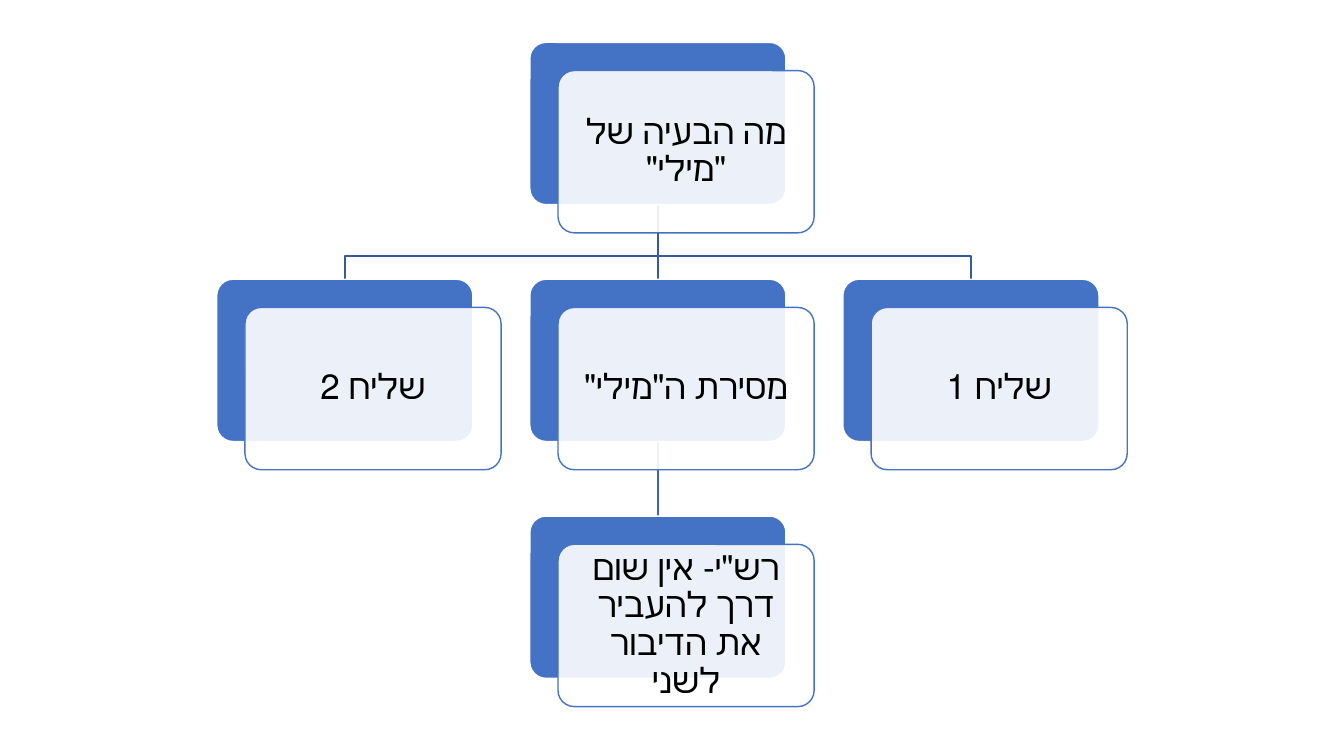
from dataclasses import dataclass

from lxml.etree import SubElement
from pptx import Presentation
from pptx.dml.color import RGBColor
from pptx.enum.shapes import MSO_CONNECTOR, MSO_SHAPE
from pptx.enum.text import MSO_ANCHOR, PP_ALIGN
from pptx.oxml.ns import qn
from pptx.util import Inches, Pt

BLUE, WHITE, BLACK = "4472C4", "FFFFFF", "000000"
LEFT, TOP = 2.15, 0.42
COLUMN, ROW = 3.105, 2.35
CARD_WIDTH, CARD_HEIGHT = 2.54, 1.61
OFFSET = 0.28
BEND = 0.51
INSET = Inches(0.15)
FRAME_FORMAT = dict(
    word_wrap=True, vertical_anchor=MSO_ANCHOR.MIDDLE,
    margin_left=INSET, margin_right=INSET, margin_top=INSET, margin_bottom=INSET,
)


@dataclass(frozen=True)
class Topic:
    text: str
    column: int
    row: int

    @property
    def left(self) -> float:
        return LEFT + self.column * COLUMN

    @property
    def top(self) -> float:
        return TOP + self.row * ROW

    @property
    def center(self) -> float:
        return self.left + CARD_WIDTH / 2

    @property
    def bottom(self) -> float:
        return self.top + CARD_HEIGHT


@dataclass(frozen=True)
class Branch:
    parent: Topic
    child: Topic
    color: str


def rgb(value: str) -> RGBColor:
    return RGBColor.from_string(value)


def set_attributes(target, values: dict) -> None:
    for name, value in values.items():
        setattr(target, name, value)


def draw_branch(shapes, branch: Branch) -> None:
    start, end = branch.parent.center, branch.child.center
    top, bottom = branch.parent.bottom, branch.child.top
    if branch.parent.column == branch.child.column:
        link = shapes.add_connector(
            MSO_CONNECTOR.STRAIGHT, Inches(start), Inches(top), Inches(end), Inches(bottom))
    else:
        corners = [(start, top + BEND), (end, top + BEND), (end, bottom)]
        builder = shapes.build_freeform(Inches(start), Inches(top))
        builder.add_line_segments([(Inches(x), Inches(y)) for x, y in corners], close=False)
        link = builder.convert_to_shape()
        link.fill.background()
    link.line.color.rgb = rgb(branch.color)
    link.line.width = Pt(1)
    if link._element.spPr.find(qn("a:effectLst")) is None:
        SubElement(link._element.spPr, qn("a:effectLst"))


def draw_card(shapes, left: float, top: float, fill: str, outline: str):
    card = shapes.add_shape(
        MSO_SHAPE.ROUNDED_RECTANGLE,
        Inches(left), Inches(top), Inches(CARD_WIDTH), Inches(CARD_HEIGHT))
    card.adjustments[0] = 0.1
    card.shadow.inherit = False
    card.fill.solid()
    card.fill.fore_color.rgb = rgb(fill)
    card.line.color.rgb = rgb(outline)
    card.line.width = Pt(1)
    return card


def draw_topic(shapes, topic: Topic) -> None:
    draw_card(shapes, topic.left, topic.top, BLUE, WHITE)
    label = draw_card(shapes, topic.left + OFFSET, topic.top + OFFSET, WHITE, BLUE)
    fill_color = label._element.spPr.find(qn("a:solidFill"))[0]
    SubElement(fill_color, qn("a:alpha"), val="90000")
    set_attributes(label.text_frame, FRAME_FORMAT)

    paragraph = label.text_frame.paragraphs[0]
    set_attributes(paragraph, dict(alignment=PP_ALIGN.CENTER, line_spacing=0.9))
    properties = paragraph._p.get_or_add_pPr()
    properties.set("rtl", "1")
    spacing = SubElement(properties, qn("a:spcAft"))
    SubElement(spacing, qn("a:spcPct"), val="35000")

    wording = paragraph.add_run()
    wording.text = topic.text
    set_attributes(wording.font, dict(size=Pt(25), name="Calibri", language_id=None))
    wording.font.color.rgb = rgb(BLACK)
    run_properties = wording._r.get_or_add_rPr()
    run_properties.set("lang", "he-IL")
    SubElement(run_properties, qn("a:cs"), typeface="+mn-cs")


def main() -> None:
    problem = Topic('מה הבעיה של "מילי"', 1, 0)
    first_agent = Topic("שליח 1", 2, 1)
    delivery = Topic('מסירת ה"מילי"', 1, 1)
    rashi = Topic('רש"י- אין שום דרך להעביר את הדיבור לשני', 1, 2)
    second_agent = Topic("שליח 2", 0, 1)
    upper, lower = "365B9D", "3E67B2"
    branches = [
        Branch(problem, second_agent, upper),
        Branch(delivery, rashi, lower),
        Branch(problem, delivery, upper),
        Branch(problem, first_agent, upper),
    ]

    deck = Presentation()
    set_attributes(deck, dict(slide_width=Inches(13.33), slide_height=Inches(7.5)))
    shapes = deck.slides.add_slide(deck.slide_layouts[6]).shapes
    for branch in branches:
        draw_branch(shapes, branch)
    for topic in (problem, first_agent, delivery, rashi, second_agent):
        draw_topic(shapes, topic)
    deck.save("out.pptx")


if __name__ == "__main__":
    main()
